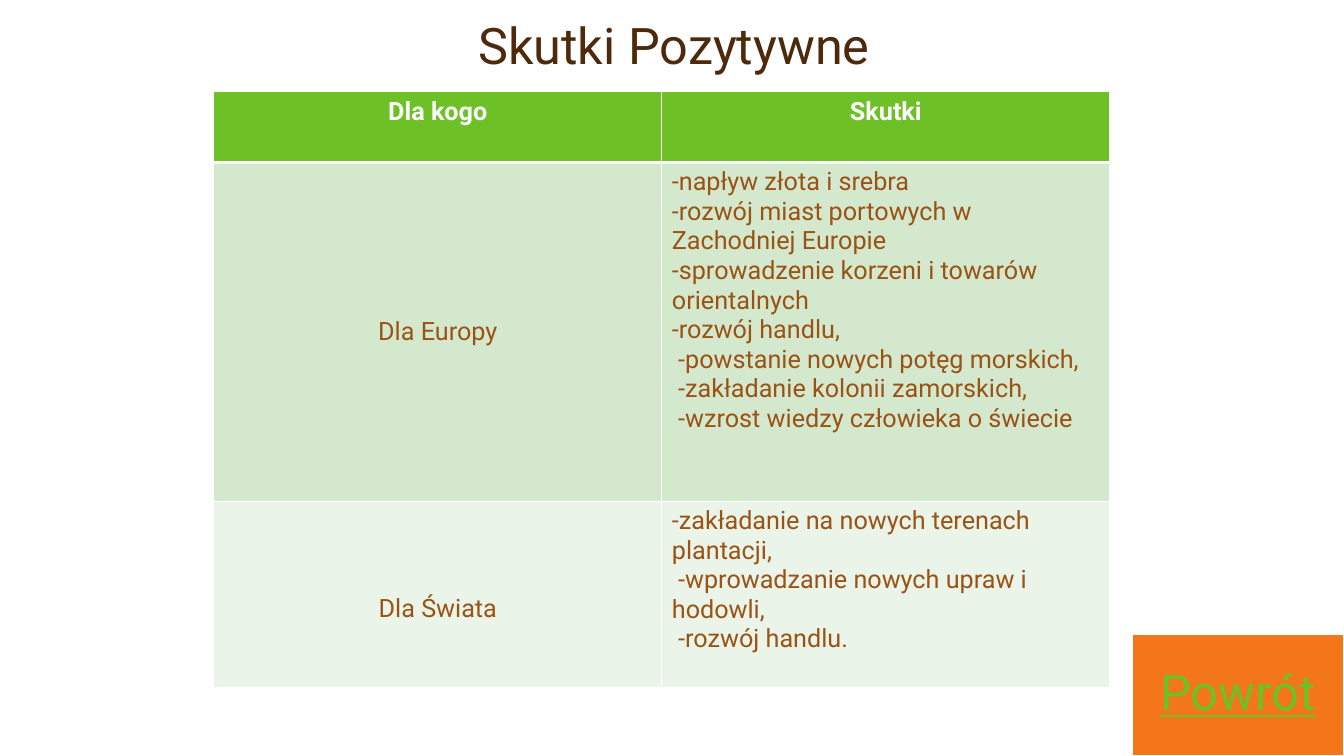
"""Build the slide on the positive effects, with a table and a return button."""
from lxml.etree import SubElement
from pptx import Presentation
from pptx.dml.color import RGBColor
from pptx.enum.shapes import MSO_SHAPE
from pptx.enum.text import MSO_ANCHOR, MSO_AUTO_SIZE, PP_ALIGN
from pptx.oxml.ns import qn
from pptx.util import Pt

WHITE = RGBColor(0xFF, 0xFF, 0xFF)
GREEN = RGBColor(0x6D, 0xC0, 0x25)
MID_GREEN = RGBColor(0xD4, 0xE8, 0xCD)
PALE_GREEN = RGBColor(0xEB, 0xF4, 0xE8)
ORANGE = RGBColor(0xF3, 0x77, 0x1A)
BROWN = RGBColor(0x9A, 0x53, 0x15)
DARK_BROWN = RGBColor(0x4D, 0x2A, 0x0B)


def write(frame, text, size=18, color=BROWN, align=PP_ALIGN.CENTER, bold=False,
          underline=False, spacing=1.0, indent_from=None):
    frame.word_wrap = True
    for number, line in enumerate(text.split("\n")):
        paragraph = frame.paragraphs[0] if number == 0 else frame.add_paragraph()
        paragraph.alignment = align
        paragraph.line_spacing = spacing
        if indent_from is not None and number >= indent_from:
            properties = paragraph._p.get_or_add_pPr()
            properties.set("marL", "0")
            properties.set("indent", str(Pt(4.5)))
        run = paragraph.add_run()
        run.text = line
        run.font.name = "Roboto"
        run.font.size = Pt(size)
        run.font.color.rgb = color
        run.font.bold = bold
        run.font.underline = underline


def add_borders(cell, bottom, top):
    properties = cell._tc.get_or_add_tcPr()
    widths = {"a:lnL": 1, "a:lnR": 1, "a:lnT": top, "a:lnB": bottom}
    for position, (side, width) in enumerate(widths.items()):
        border = SubElement(properties, qn(side), w=str(Pt(width)))
        fill = SubElement(border, qn("a:solidFill"))
        SubElement(fill, qn("a:srgbClr"), val=str(WHITE))
        properties.insert(position, border)


presentation = Presentation()
presentation.slide_width = Pt(960)
presentation.slide_height = Pt(540)
slide = presentation.slides.add_slide(presentation.slide_layouts[5])

title = slide.shapes.title
title.left, title.top, title.width, title.height = Pt(85.5), Pt(0), Pt(792), Pt(57.5)
title.text_frame.auto_size = MSO_AUTO_SIZE.NONE
title.text_frame.vertical_anchor = MSO_ANCHOR.BOTTOM
write(title.text_frame, "Skutki Pozytywne", size=36, color=DARK_BROWN, spacing=0.9)

europe_effects = """-napływ złota i srebra
-rozwój miast portowych w Zachodniej Europie
-sprowadzenie korzeni i towarów orientalnych
-rozwój handlu,
-powstanie nowych potęg morskich,
-zakładanie kolonii zamorskich,
-wzrost wiedzy człowieka o świecie"""
world_effects = """-zakładanie na nowych terenach plantacji,
-wprowadzanie nowych upraw i hodowli,
-rozwój handlu."""
header = {"color": WHITE, "bold": True}
effects_rows = [
    (50.5, GREEN, "Dla kogo", "Skutki", header, header),
    (242, MID_GREEN, "Dla Europy", europe_effects, {},
     {"align": PP_ALIGN.LEFT, "indent_from": 4}),
    (133, PALE_GREEN, "Dla Świata", world_effects, {},
     {"align": PP_ALIGN.LEFT, "indent_from": 1}),
]
effects = slide.shapes.add_table(3, 2, Pt(152.75), Pt(65.5), Pt(640), Pt(425.5)).table
for column in effects.columns:
    column.width = Pt(320)
for row, (height, fill, group, outcome, group_format, outcome_format) in enumerate(effects_rows):
    effects.rows[row].height = Pt(height)
    for column, (text, text_format) in enumerate([(group, group_format), (outcome, outcome_format)]):
        cell = effects.cell(row, column)
        cell.fill.solid()
        cell.fill.fore_color.rgb = fill
        add_borders(cell, bottom=3 if row == 0 else 1, top=3 if row == 1 else 1)
        write(cell.text_frame, text, **text_format)
        if row > 0 and column == 0:
            cell.vertical_anchor = MSO_ANCHOR.MIDDLE
effects.cell(2, 0).margin_top = Pt(25)

return_button = slide.shapes.add_shape(MSO_SHAPE.RECTANGLE, Pt(808.5), Pt(453), Pt(151.5), Pt(87))
return_button.shadow.inherit = False
return_button.fill.solid()
return_button.fill.fore_color.rgb = ORANGE
return_button.line.color.rgb = WHITE
return_button.line.width = Pt(1)
return_button.text_frame.vertical_anchor = MSO_ANCHOR.MIDDLE
write(return_button.text_frame, "Powrót", size=35, color=GREEN, underline=True, spacing=0.9)

presentation.save("out.pptx")
